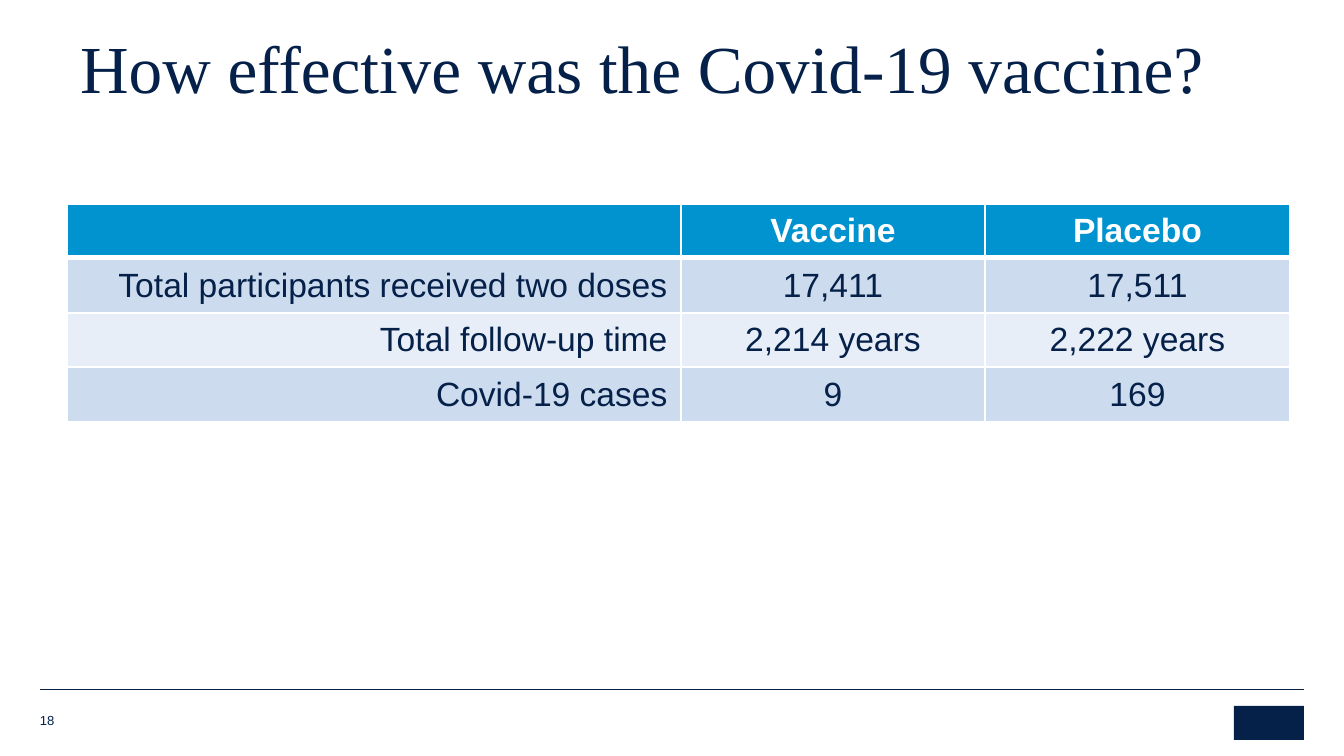
from dataclasses import dataclass

import pptx
import pptx.dml.color
import pptx.enum.shapes
import pptx.enum.text
import pptx.oxml.ns
import pptx.util
from lxml import etree

SLIDE_W, SLIDE_H = 1344, 756
EMU_PER_PX = 9144000 / SLIDE_W

COLORS = {
    "navy": "052049",
    "header": "0093D0",
    "band_dark": "CCDCEE",
    "band_light": "E7EEF7",
    "white": "FFFFFF",
}

ALIGN = pptx.enum.text.PP_ALIGN
ANCHOR = pptx.enum.text.MSO_ANCHOR


@dataclass
class Box:
    x: int
    y: int
    w: int
    h: int


@dataclass
class Rule:
    x1: int
    x2: int
    y: int


FOOTER_RULES = [Rule(54, 1290, 689), Rule(40, 1304, 689)]
LOGO_BLOCK = Box(1234, 706, 70, 34)
PAGE_NUMBER = Box(40, 711, 36, 17)
TITLE = Box(67, 47, 1202, 67)
TABLE = Box(67, 204, 1223, 218)

COLUMN_WIDTHS = [614, 304, 305]
ROW_HEIGHTS = [54, 55, 54, 55]
ROWS = [
    ("", "Vaccine", "Placebo"),
    ("Total participants received two doses", "17,411", "17,511"),
    ("Total follow-up time", "2,214 years", "2,222 years"),
    ("Covid-19 cases", "9", "169"),
]


def px(n: int) -> pptx.util.Emu:
    return pptx.util.Emu(round(n * EMU_PER_PX))


def emu(box: Box) -> list:
    return [px(n) for n in (box.x, box.y, box.w, box.h)]


def rgb(name: str) -> pptx.dml.color.RGBColor:
    return pptx.dml.color.RGBColor.from_string(COLORS[name])


def set_text(tf, text: str, *, size=18, font="Arial", color="navy",
             bold=False, align=ALIGN.LEFT, spacing=None) -> None:
    p = tf.paragraphs[0]
    p.alignment = align
    if spacing:
        p.line_spacing = spacing
    p.font.size = pptx.util.Pt(size)
    if text:
        r = p.add_run()
        r.text = text
        r.font.size = pptx.util.Pt(size)
        r.font.name = font
        r.font.bold = bold
        r.font.color.rgb = rgb(color)


def add_text(s, box: Box, text: str, *, inset=True, **fmt) -> None:
    tf = s.shapes.add_textbox(*emu(box)).text_frame
    tf.word_wrap = True
    tf.vertical_anchor = ANCHOR.BOTTOM
    if not inset:
        tf.margin_left = tf.margin_right = tf.margin_top = tf.margin_bottom = 0
    set_text(tf, text, **fmt)


def add_rule(s, rule: Rule) -> None:
    line = s.shapes.add_connector(
        pptx.enum.shapes.MSO_CONNECTOR.STRAIGHT,
        px(rule.x1), px(rule.y), px(rule.x2), px(rule.y))
    line.line.color.rgb = rgb("navy")
    line.line.width = pptx.util.Pt(0.25)
    etree.SubElement(line._element.spPr, pptx.oxml.ns.qn("a:effectLst"))


def set_borders(cell, widths: dict) -> None:
    """Put white borders, widths in points, ahead of the cell's fill."""
    qn = pptx.oxml.ns.qn
    tcPr = cell._tc.get_or_add_tcPr()
    for i, (side, width) in enumerate(widths.items()):
        ln = etree.Element(qn(f"a:ln{side}"), w=str(pptx.util.Pt(width)))
        fill = etree.SubElement(ln, qn("a:solidFill"))
        etree.SubElement(fill, qn("a:srgbClr"), val=COLORS["white"])
        tcPr.insert(i, ln)


def add_results_table(s) -> None:
    table = s.shapes.add_table(len(ROWS), len(COLUMN_WIDTHS), *emu(TABLE)).table
    for column, width in zip(table.columns, COLUMN_WIDTHS):
        column.width = px(width)
    for i, (texts, height) in enumerate(zip(ROWS, ROW_HEIGHTS)):
        table.rows[i].height = px(height)
        header = i == 0
        fill = "header" if header else ("band_light", "band_dark")[i % 2]
        for j, text in enumerate(texts):
            cell = table.cell(i, j)
            cell.fill.solid()
            cell.fill.fore_color.rgb = rgb(fill)
            cell.vertical_anchor = ANCHOR.MIDDLE
            set_text(cell.text_frame, text, bold=header,
                     color="white" if header else "navy",
                     align=ALIGN.CENTER if j else ALIGN.RIGHT)
            set_borders(cell, {"L": 1, "R": 1, "T": 3 if i == 1 else 1,
                               "B": 3 if header else 1})


def main() -> None:
    prs = pptx.Presentation()
    prs.slide_width, prs.slide_height = px(SLIDE_W), px(SLIDE_H)
    s = prs.slides.add_slide(prs.slide_layouts[6])

    # Footer: rules, plain block for the logo, page number
    for rule in FOOTER_RULES:
        add_rule(s, rule)
    sp = s.shapes.add_shape(
        pptx.enum.shapes.MSO_SHAPE.RECTANGLE, *emu(LOGO_BLOCK))
    sp.shadow.inherit = False
    sp.fill.solid()
    sp.fill.fore_color.rgb = rgb("navy")
    sp.line.fill.background()
    add_text(s, PAGE_NUMBER, "18", inset=False, size=7)

    # Title
    add_text(s, TITLE, "How effective was the Covid-19 vaccine?",
             size=36, font="Times New Roman", spacing=0.85)

    # Trial results
    add_results_table(s)

    prs.save("out.pptx")


if __name__ == "__main__":
    main()
